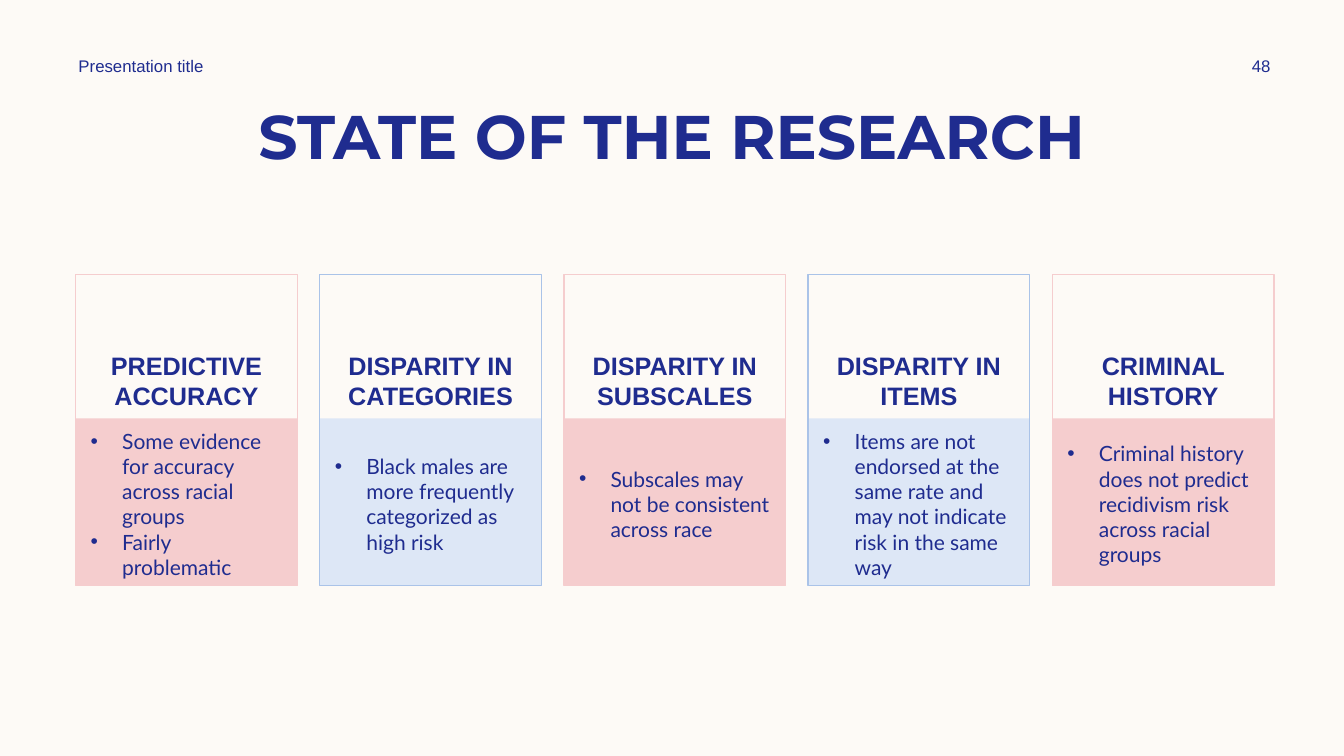
from copy import deepcopy

from lxml.etree import SubElement
from pptx import Presentation
from pptx.dml.color import RGBColor
from pptx.enum.shapes import MSO_SHAPE
from pptx.enum.text import MSO_ANCHOR, MSO_AUTO_SIZE, PP_ALIGN
from pptx.oxml.ns import qn
from pptx.util import Pt

NAVY, CREAM = "1F2C8F", "FDFAF6"
PINK, PALE_BLUE, BLUE = "F5CDCE", "DDE7F6", "AAC3E8"
FINDINGS = [
    ("PREDICTIVE ACCURACY", ["Some evidence for accuracy across racial groups",
                             "Fairly problematic"]),
    ("DISPARITY IN CATEGORIES", ["Black males are more frequently categorized as high risk"]),
    ("DISPARITY IN SUBSCALES", ["Subscales may not be consistent across race"]),
    ("DISPARITY IN ITEMS", ["Items are not endorsed at the same rate and may not "
                            "indicate risk in the same way"]),
    ("CRIMINAL HISTORY", ["Criminal history does not predict recidivism risk "
                          "across racial groups"]),
]


def color(hex_code):
    """Turn a hex string into a colour."""
    return RGBColor.from_string(hex_code)


def place(shape, left, top, width, height):
    """Move and size a shape, in points."""
    shape.left, shape.top = Pt(left), Pt(top)
    shape.width, shape.height = Pt(width), Pt(height)


def write(shape, *lines, font="Arial", size=12, bold=False, align=PP_ALIGN.LEFT,
          anchor=MSO_ANCHOR.TOP, inset_top=3.6, bullet=None):
    """Fill a shape with formatted paragraphs."""
    frame = shape.text_frame
    frame.word_wrap, frame.auto_size = True, MSO_AUTO_SIZE.NONE
    frame.vertical_anchor = anchor
    frame.margin_left = frame.margin_right = Pt(7.2)
    frame.margin_top, frame.margin_bottom = Pt(inset_top), Pt(3.6)
    frame.text = "\n".join(lines)
    for paragraph in frame.paragraphs:
        paragraph.alignment = align
        paragraph.space_before = paragraph.space_after = Pt(0)
        text_font = paragraph.runs[0].font
        text_font.name, text_font.size, text_font.bold = font, Pt(size), bold
        text_font.color.rgb = color(NAVY)
        properties = paragraph._p.get_or_add_pPr()
        indent = Pt(22.5) if bullet else 0
        properties.set("marL", str(indent))
        properties.set("indent", str(-indent))
        if bullet:
            SubElement(properties, qn("a:buFont")).set("typeface", "Arial")
            SubElement(properties, qn("a:buChar")).set("char", bullet)
        else:
            SubElement(properties, qn("a:buNone"))


def add_body_placeholders(layout, count):
    """Extend a layout to the given number of body placeholders."""
    body = layout.placeholders.get(idx=1).element
    for number in range(20, 19 + count):
        extra = deepcopy(body)
        extra.xpath(".//p:cNvPr")[0].set("id", str(number))
        extra.xpath(".//p:ph")[0].set("idx", str(number))
        body.getparent().append(extra)


def header(slide, left, top, width):
    """Place the running title, the page number and the slide title."""
    running_title = slide.shapes.add_textbox(Pt(left - 11), Pt(top), Pt(252), Pt(21.6))
    write(running_title, "Presentation title", anchor=MSO_ANCHOR.MIDDLE)
    page_number = slide.shapes.add_textbox(Pt(left + width - 38), Pt(top), Pt(77.8), Pt(21.6))
    write(page_number, "48", align=PP_ALIGN.CENTER, anchor=MSO_ANCHOR.MIDDLE)
    title = slide.shapes.title
    place(title, left, top + 30.2, width, 60.5)
    write(title, "STATE OF THE RESEARCH", font="Montserrat", size=44, bold=True,
          align=PP_ALIGN.CENTER)


def finding_card(slide, heading, points, finding, box, fill, outline):
    """Place a tinted panel, an outlined heading and its bullet list."""
    left, top, width, height = box
    panel_height = 119.5
    panel_top = top + height - panel_height
    panel = slide.shapes.add_shape(MSO_SHAPE.RECTANGLE, Pt(left), Pt(panel_top),
                                   Pt(width), Pt(panel_height))
    panel.shadow.inherit = False
    panel.fill.solid()
    panel.fill.fore_color.rgb = color(fill)
    panel.line.fill.background()

    place(heading, *box)
    heading.line.color.rgb = color(outline)
    heading.line.width = Pt(1)
    write(heading, finding, size=18, bold=True, align=PP_ALIGN.CENTER, inset_top=54)

    place(points[0], left + 3.6, panel_top + 7.2, width - 7.2, 108)
    write(points[0], *points[1], font="Lato", size=15, anchor=MSO_ANCHOR.MIDDLE, bullet="•")
    for placeholder in (heading, points[0]):
        slide.shapes._spTree.append(placeholder.element)


def findings_row(slide, left, top, width, height):
    """Spread the finding cards evenly over a row."""
    card_width = 158.4
    pitch = (width - card_width) / (len(FINDINGS) - 1)
    bodies = list(slide.placeholders)[1:]
    for index, (finding, statements) in enumerate(FINDINGS):
        fill, outline = (PALE_BLUE, BLUE) if index % 2 else (PINK, PINK)
        heading, statement_list = bodies[2 * index:2 * index + 2]
        box = (left + index * pitch, top, card_width, height)
        finding_card(slide, heading, (statement_list, statements), finding, box, fill, outline)


def main():
    """Build and save the slide."""
    deck = Presentation()
    deck.slide_width, deck.slide_height = Pt(960), Pt(540)
    layout = deck.slide_layouts[1]
    add_body_placeholders(layout, 2 * len(FINDINGS))
    slide = deck.slides.add_slide(layout)
    slide.background.fill.solid()
    slide.background.fill.fore_color.rgb = color(CREAM)
    header(slide, 60, 36, 840)
    findings_row(slide, 54, 196, 856, 222.3)
    deck.save("out.pptx")


if __name__ == "__main__":
    main()
